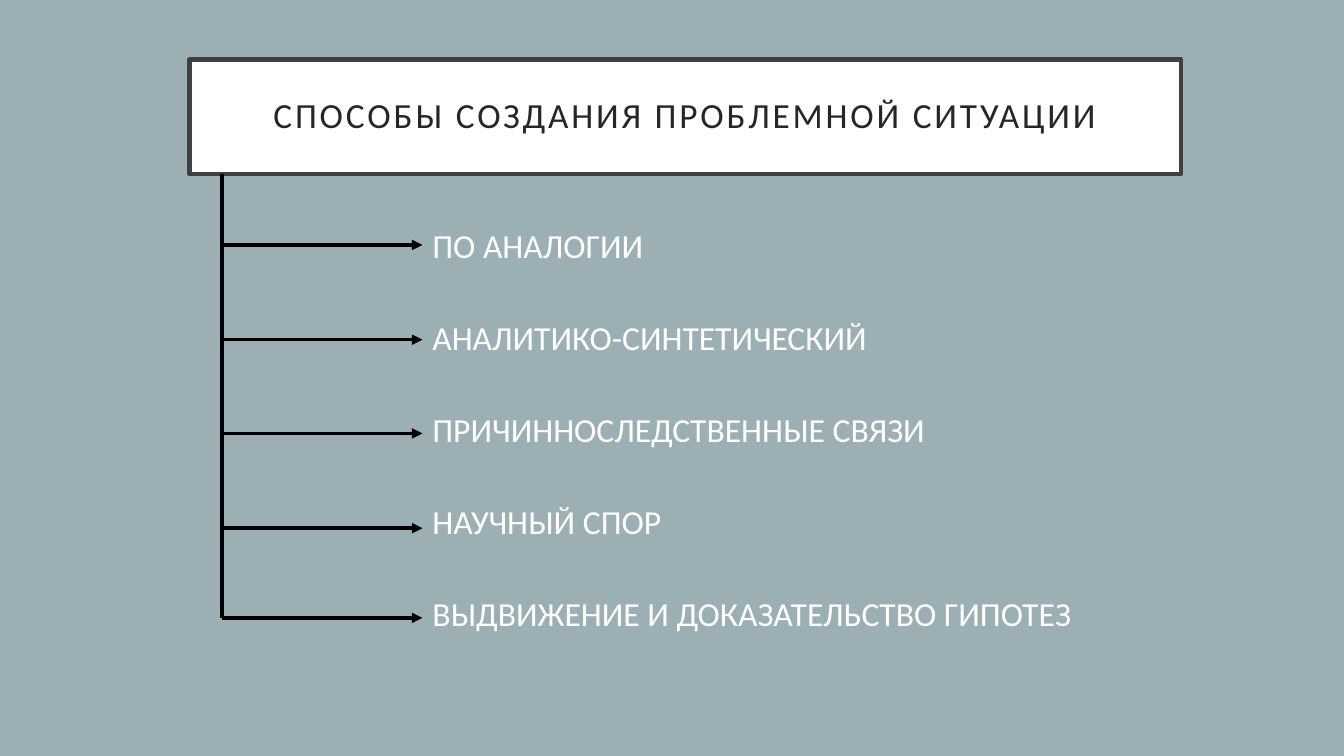
from dataclasses import dataclass

from lxml import etree
from pptx import Presentation
from pptx.dml.color import RGBColor as RGB
from pptx.enum.shapes import MSO_CONNECTOR as CONNECTOR
from pptx.enum.text import MSO_ANCHOR as ANCHOR, MSO_AUTO_SIZE as AUTO, PP_ALIGN as ALIGN
from pptx.oxml.ns import qn
from pptx.util import Inches, Pt


@dataclass(frozen=True)
class Theme:
    font: str = "Calibri"
    background: RGB = RGB.from_string("9BAFB5")
    panel: RGB = RGB.from_string("FFFFFF")
    border: RGB = RGB.from_string("404040")
    title: RGB = RGB.from_string("262626")
    text: RGB = RGB.from_string("FFFFFF")
    line: RGB = RGB.from_string("000000")
    title_size: float = 25.2
    text_size: float = 24
    border_width: float = 3
    line_width: float = 2.5


THEME = Theme()
TITLE = "СПОСОБЫ СОЗДАНИЯ ПРОБЛЕМНОЙ СИТУАЦИИ"
# Each method with the height of its arrow below the title box
METHODS = [
    ("ПО АНАЛОГИИ", 0.7),
    ("АНАЛИТИКО-СИНТЕТИЧЕСКИЙ", 1.64),
    ("ПРИЧИННОСЛЕДСТВЕННЫЕ СВЯЗИ", 2.57),
    ("НАУЧНЫЙ СПОР", 3.51),
    ("ВЫДВИЖЕНИЕ И ДОКАЗАТЕЛЬСТВО ГИПОТЕЗ", 4.4),
]


def set_format(target, values):
    for name, value in values.items():
        setattr(target, name, value)


def add_run(p, text, size, color):
    r = p.add_run()
    r.text = text
    set_format(r.font, {"name": THEME.font, "size": Pt(size), "bold": False})
    r.font.color.rgb = color
    return r


def add_title(s, left, top, width, height):
    sp = s.shapes.title
    set_format(sp, {"left": Inches(left), "top": Inches(top),
                    "width": Inches(width), "height": Inches(height)})
    sp.fill.solid()
    sp.fill.fore_color.rgb = THEME.panel
    sp.line.color.rgb = THEME.border
    sp.line.width = Pt(THEME.border_width)
    tf = sp.text_frame
    set_format(tf, {"word_wrap": True, "auto_size": AUTO.NONE,
                    "vertical_anchor": ANCHOR.MIDDLE,
                    "margin_left": Inches(0.3), "margin_right": Inches(0.3),
                    "margin_top": Inches(0.2), "margin_bottom": Inches(0.2)})
    p = tf.paragraphs[0]
    set_format(p, {"alignment": ALIGN.CENTER, "line_spacing": 0.9})
    r = add_run(p, TITLE, THEME.title_size, THEME.title)
    r.font._element.set("spc", "200")  # letter spacing of 2 pt


def add_line(s, x1, y1, x2, y2, arrow=False):
    line = s.shapes.add_connector(CONNECTOR.STRAIGHT, *map(Inches, (x1, y1, x2, y2)))
    line.line.color.rgb = THEME.line
    line.line.width = Pt(THEME.line_width)
    if arrow:
        etree.SubElement(line.line._get_or_add_ln(), qn("a:tailEnd"), type="triangle")
    etree.SubElement(line._element.spPr, qn("a:effectLst"))


def add_methods(s, left, top, width, height):
    # Labels
    arrow_length = 1.99
    text_left, text_top = left + arrow_length, top + 0.53
    box = s.shapes.add_textbox(Inches(text_left), Inches(text_top),
                               Inches(width - arrow_length), Inches(height - 0.53))
    tf = box.text_frame
    tf.word_wrap = True
    for i, (label, _) in enumerate(METHODS):
        p = tf.paragraphs[0] if i == 0 else tf.add_paragraph()
        set_format(p, {"line_spacing": 0.8, "space_before": Pt(42.6 if i else 0)})
        add_run(p, label, THEME.text_size, THEME.text)

    # Trunk and its arrows
    add_line(s, left, top, left, top + METHODS[-1][1])
    for _, drop in METHODS:
        add_line(s, left, top + drop, left + arrow_length, top + drop, arrow=True)


def main():
    prs = Presentation()
    set_format(prs, {"slide_width": Inches(13.33), "slide_height": Inches(7.5)})
    s = prs.slides.add_slide(prs.slide_layouts.get_by_name("Title Only"))
    s.background.fill.solid()
    s.background.fill.fore_color.rgb = THEME.background
    add_title(s, 1.88, 0.59, 9.83, 1.14)
    add_methods(s, 2.2, 1.73, 9.43, 4.7)
    prs.save("out.pptx")


if __name__ == "__main__":
    main()
